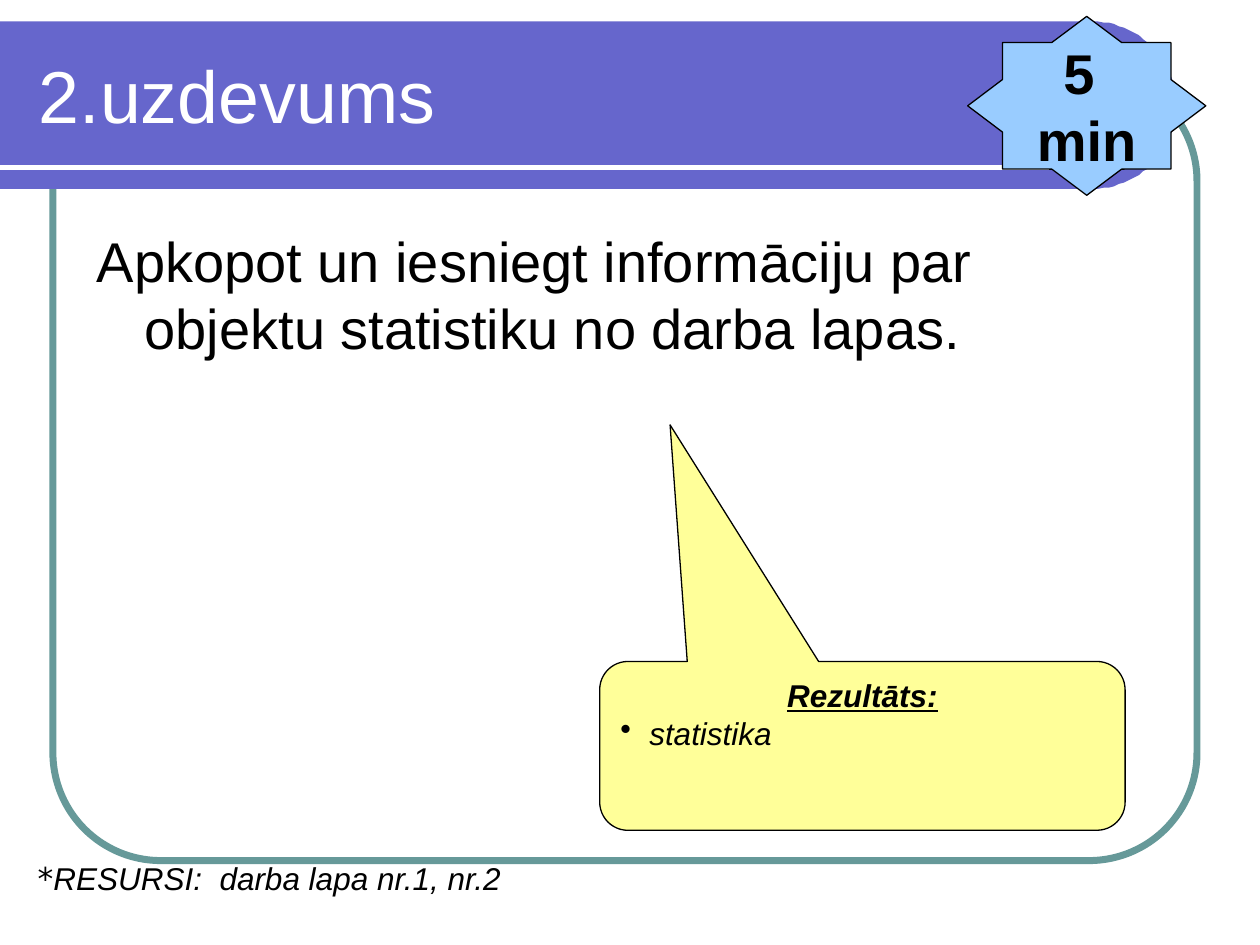
from math import cos, pi, sin

from lxml.etree import SubElement
from pptx import Presentation
from pptx.dml.color import RGBColor
from pptx.enum.shapes import MSO_CONNECTOR as CONN, MSO_SHAPE as SHAPE
from pptx.enum.text import MSO_ANCHOR as ANCHOR, PP_ALIGN as ALIGN
from pptx.oxml.ns import qn
from pptx.util import Emu, Pt

PX = 9144  # EMU per px, 100 px to the inch
BLACK, WHITE = "000000", "FFFFFF"
VIOLET, TEAL, YELLOW, BLUE = "6666CC", "669999", "FFFF99", "99CCFF"


def px(*values):
    return [Emu(v * PX) for v in values]


def color(hex_string):
    return RGBColor.from_string(hex_string)


def paint(sp, fill=None, line=None, weight=0.75):
    sp.shadow.inherit = False
    if fill:
        sp.fill.solid()
        sp.fill.fore_color.rgb = color(fill)
    else:
        sp.fill.background()
    if line:
        sp.line.color.rgb = color(line)
        sp.line.width = Pt(weight)
    else:
        sp.line.fill.background()


def add_preset(s, kind, box, adjustments, **style):
    sp = s.shapes.add_shape(kind, *px(*box))
    for i, value in enumerate(adjustments):
        sp.adjustments[i] = value
    paint(sp, **style)
    return sp


def add_band(s, top, straight, radius, steps=48):
    """Title band with a half-round right end."""
    angles = [pi * (i / steps - 0.5) for i in range(steps + 1)]
    arc = [(round(straight + radius * cos(a), 2),
            round(top + radius + radius * sin(a), 2)) for a in angles]
    builder = s.shapes.build_freeform(0, top, scale=PX)
    builder.add_line_segments(arc + [(0, top + 2 * radius)], close=True)
    paint(builder.convert_to_shape(), fill=VIOLET)


def add_line(s, x1, y1, x2, y2, line, weight):
    cn = s.shapes.add_connector(CONN.STRAIGHT, *px(x1, y1, x2, y2))
    cn.line.color.rgb = color(line)
    cn.line.width = Pt(weight)
    SubElement(cn._element.spPr, qn("a:effectLst"))


def add_text(s, box, anchor=ANCHOR.TOP):
    tf = s.shapes.add_textbox(*px(*box)).text_frame
    tf.word_wrap = True
    tf.vertical_anchor = anchor
    return tf


def set_paragraph(p, runs, size, font_color=BLACK, align=ALIGN.LEFT, bold=False,
                  italic=False, underline=False):
    """Write runs given as (text, font) pairs; the paragraph holds the rest."""
    p.alignment = align
    f = p.font
    f.size, f.bold, f.italic, f.underline = Pt(size), bold, italic, underline
    f.color.rgb = color(font_color)
    f.name = "Arial"
    for text, font in runs:
        r = p.add_run()
        r.text = text
        if font != "Arial":
            r.font.name = font


def set_indent(p, hang):
    pPr = p._p.get_or_add_pPr()
    pPr.set("marL", str(hang * PX))
    pPr.set("indent", str(-hang * PX))


def set_bullet(p, char):
    SubElement(p._p.get_or_add_pPr(), qn("a:buChar")).set("char", char)


def set_space_before(p, percent):
    space = SubElement(p._p.get_or_add_pPr(), qn("a:spcBef"))
    SubElement(space, qn("a:spcPct")).set("val", str(percent * 1000))


def main():
    prs = Presentation()
    prs.slide_width, prs.slide_height = px(1000, 750)
    s = prs.slides.add_slide(prs.slide_layouts[6])

    # Frame and title band
    add_preset(s, SHAPE.ROUNDED_RECTANGLE, (42, 58, 908, 625), [0.137],
               line=TEAL, weight=4)
    add_band(s, top=17, straight=867, radius=66.5)
    add_line(s, 0, 133, 883, 133, WHITE, 3)

    # Title
    tf = add_text(s, (21, 25, 877, 100), ANCHOR.MIDDLE)
    set_paragraph(tf.paragraphs[0], [("2.uzdevums", "Arial")], 42, WHITE)

    # Task
    p = add_text(s, (67, 175, 867, 247)).paragraphs[0]
    set_indent(p, 38)
    set_space_before(p, 20)
    task = "Apkopot un iesniegt informāciju par objektu statistiku no darba lapas."
    set_paragraph(p, [(task, "Arial")], 32)

    # Result callout
    callout = add_preset(s, SHAPE.ROUNDED_RECTANGULAR_CALLOUT, (476, 525, 417, 134),
                         [-0.366, -1.901, 0.167], fill=YELLOW, line=BLACK)
    tf = callout.text_frame
    tf.vertical_anchor = ANCHOR.TOP
    set_paragraph(tf.paragraphs[0], [("Rezultāts:", "Arial")], 18,
                  align=ALIGN.CENTER, bold=True, italic=True, underline=True)
    p = tf.add_paragraph()
    set_indent(p, 23)
    set_bullet(p, "•")
    set_paragraph(p, [("statistika", "Arial")], 18, italic=True)

    # Resources
    p = add_text(s, (20, 680, 898, 37)).paragraphs[0]
    p.line_spacing = 0.9
    set_space_before(p, 20)
    set_paragraph(p, [("*", "DejaVu Sans"),
                      ("RESURSI:  darba lapa nr.1, nr.2", "Arial")], 18, italic=True)

    # Time star
    star = add_preset(s, SHAPE.STAR_8_POINT, (768, 13, 189, 142), [0.383],
                      fill=BLUE, line=BLACK)
    tf = star.text_frame
    tf.word_wrap = False
    tf.vertical_anchor = ANCHOR.MIDDLE
    for p, text in ((tf.paragraphs[0], "5 "), (tf.add_paragraph(), "min")):
        set_paragraph(p, [(text, "Arial")], 32, align=ALIGN.CENTER, bold=True)

    prs.save("out.pptx")


if __name__ == "__main__":
    main()
